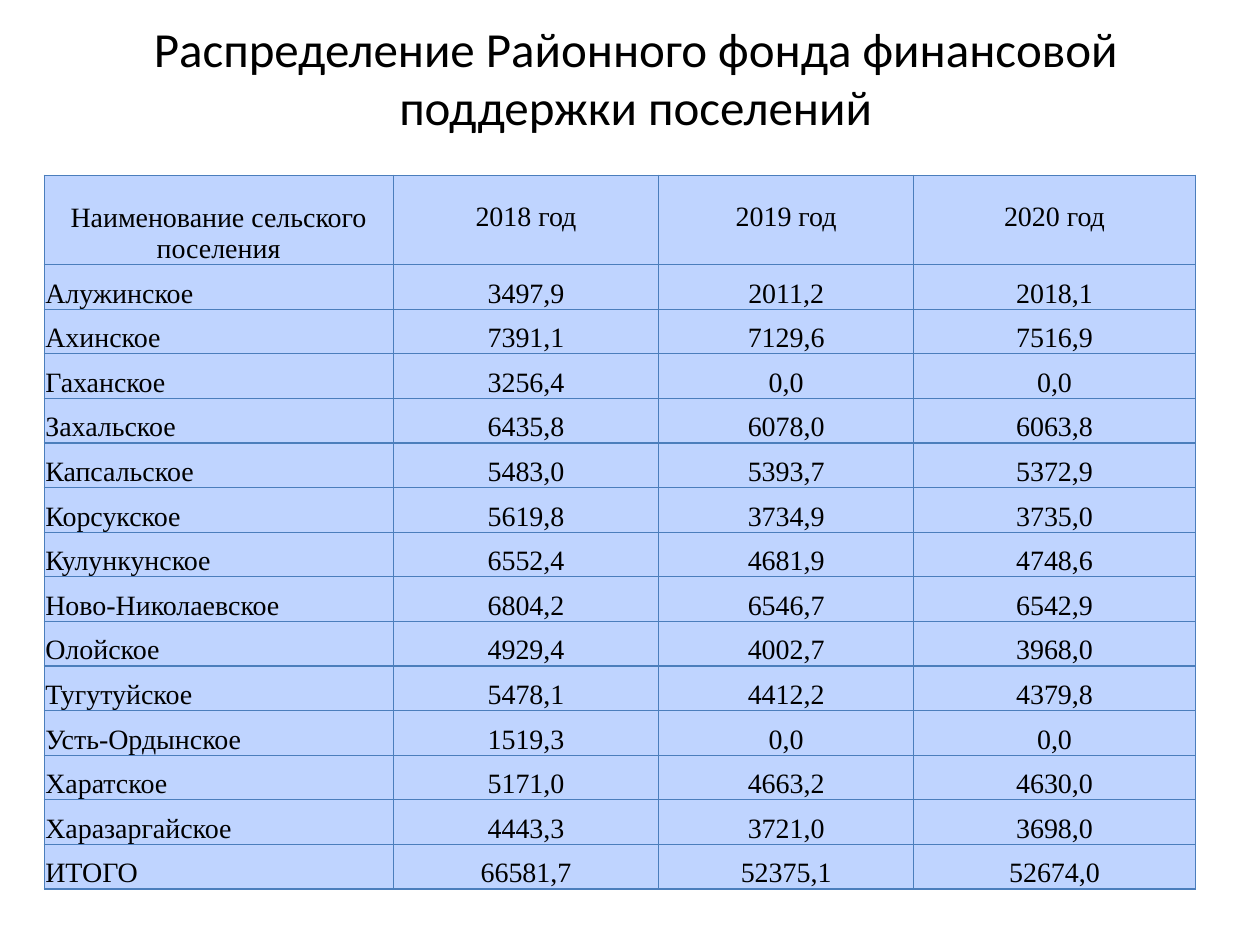
from dataclasses import dataclass

from lxml import etree
from pptx import Presentation, util as u
from pptx.dml.color import RGBColor
from pptx.enum import text
from pptx.oxml.ns import qn


@dataclass(frozen=True)
class Theme:
    ink: str = "000000"
    cell_fill: str = "BFD4FF"
    border: str = "4B7EBC"
    border_width: float = 0.75
    title_font: str = "Calibri"
    table_font: str = "Times New Roman"
    title_size: int = 28
    table_size: int = 16


@dataclass(frozen=True)
class Settlement:
    name: str
    grants: tuple[str, str, str]


THEME = Theme()
TITLE = "Распределение Районного фонда финансовой поддержки поселений"
HEADERS = ("Наименование сельского поселения", "2018 год", "2019 год", "2020 год")
SETTLEMENTS = (
    Settlement("Алужинское", ("3497,9", "2011,2", "2018,1")),
    Settlement("Ахинское", ("7391,1", "7129,6", "7516,9")),
    Settlement("Гаханское", ("3256,4", "0,0", "0,0")),
    Settlement("Захальское", ("6435,8", "6078,0", "6063,8")),
    Settlement("Капсальское", ("5483,0", "5393,7", "5372,9")),
    Settlement("Корсукское", ("5619,8", "3734,9", "3735,0")),
    Settlement("Кулункунское", ("6552,4", "4681,9", "4748,6")),
    Settlement("Ново-Николаевское", ("6804,2", "6546,7", "6542,9")),
    Settlement("Олойское", ("4929,4", "4002,7", "3968,0")),
    Settlement("Тугутуйское", ("5478,1", "4412,2", "4379,8")),
    Settlement("Усть-Ордынское", ("1519,3", "0,0", "0,0")),
    Settlement("Харатское", ("5171,0", "4663,2", "4630,0")),
    Settlement("Харазаргайское", ("4443,3", "3721,0", "3698,0")),
    Settlement("ИТОГО", ("66581,7", "52375,1", "52674,0")),
)
COLUMN_WIDTHS = (2.77, 2.11, 2.02, 2.24)
TABLE_HEIGHT = 5.67
HEADER_HEIGHT = 0.71
YEAR_BOTTOM_MARGIN = 0.25  # lifts the years one line above the header's base


def write_text(frame, content: str, *, font: str, size: int, centered: bool = True) -> None:
    paragraph = frame.paragraphs[0]
    paragraph.alignment = text.PP_ALIGN.CENTER if centered else text.PP_ALIGN.LEFT
    run = paragraph.add_run()
    run.text = content
    run.font.name = font
    run.font.size = u.Pt(size)
    run.font.color.rgb = RGBColor.from_string(THEME.ink)


def add_borders(cell) -> None:
    properties = cell._tc.get_or_add_tcPr()
    for side in ("a:lnL", "a:lnR", "a:lnT", "a:lnB"):
        line = etree.SubElement(properties, qn(side), w=str(u.Pt(THEME.border_width)))
        fill = etree.SubElement(line, qn("a:solidFill"))
        etree.SubElement(fill, qn("a:srgbClr"), val=THEME.border)


def format_cell(cell, content: str, *, centered: bool, bottom: float) -> None:
    cell.margin_left = cell.margin_right = cell.margin_top = u.Inches(0.01)
    cell.margin_bottom = u.Inches(bottom)
    cell.vertical_anchor = text.MSO_ANCHOR.BOTTOM
    add_borders(cell)
    cell.fill.solid()
    cell.fill.fore_color.rgb = RGBColor.from_string(THEME.cell_fill)
    write_text(cell.text_frame, content, font=THEME.table_font,
               size=THEME.table_size, centered=centered)


def add_title(slide) -> None:
    title = slide.shapes.title
    title.left, title.top = u.Inches(0.59), u.Inches(0)
    title.width, title.height = u.Inches(8.91), u.Inches(1.22)
    title.text_frame.vertical_anchor = text.MSO_ANCHOR.MIDDLE
    write_text(title.text_frame, TITLE, font=THEME.title_font, size=THEME.title_size)


def add_grants_table(slide) -> None:
    rows = [HEADERS] + [(item.name, *item.grants) for item in SETTLEMENTS]
    table = slide.shapes.add_table(
        len(rows), len(HEADERS), u.Inches(0.35), u.Inches(1.39),
        u.Inches(sum(COLUMN_WIDTHS)), u.Inches(TABLE_HEIGHT)).table
    table.horz_banding = False
    table.first_row = False

    for column, width in zip(table.columns, COLUMN_WIDTHS):
        column.width = u.Inches(width)
    body_height = (TABLE_HEIGHT - HEADER_HEIGHT) / len(SETTLEMENTS)
    for index, row in enumerate(table.rows):
        row.height = u.Inches(body_height if index else HEADER_HEIGHT)

    for row_index, values in enumerate(rows):
        for column_index, value in enumerate(values):
            is_header = row_index == 0
            is_year = is_header and column_index > 0
            format_cell(table.cell(row_index, column_index), value,
                        centered=is_header or column_index > 0,
                        bottom=YEAR_BOTTOM_MARGIN if is_year else 0)


def main() -> None:
    presentation = Presentation()
    presentation.slide_width, presentation.slide_height = u.Inches(10), u.Inches(7.5)
    slide = presentation.slides.add_slide(presentation.slide_layouts[5])  # title only
    add_title(slide)
    add_grants_table(slide)
    presentation.save("out.pptx")


if __name__ == "__main__":
    main()
